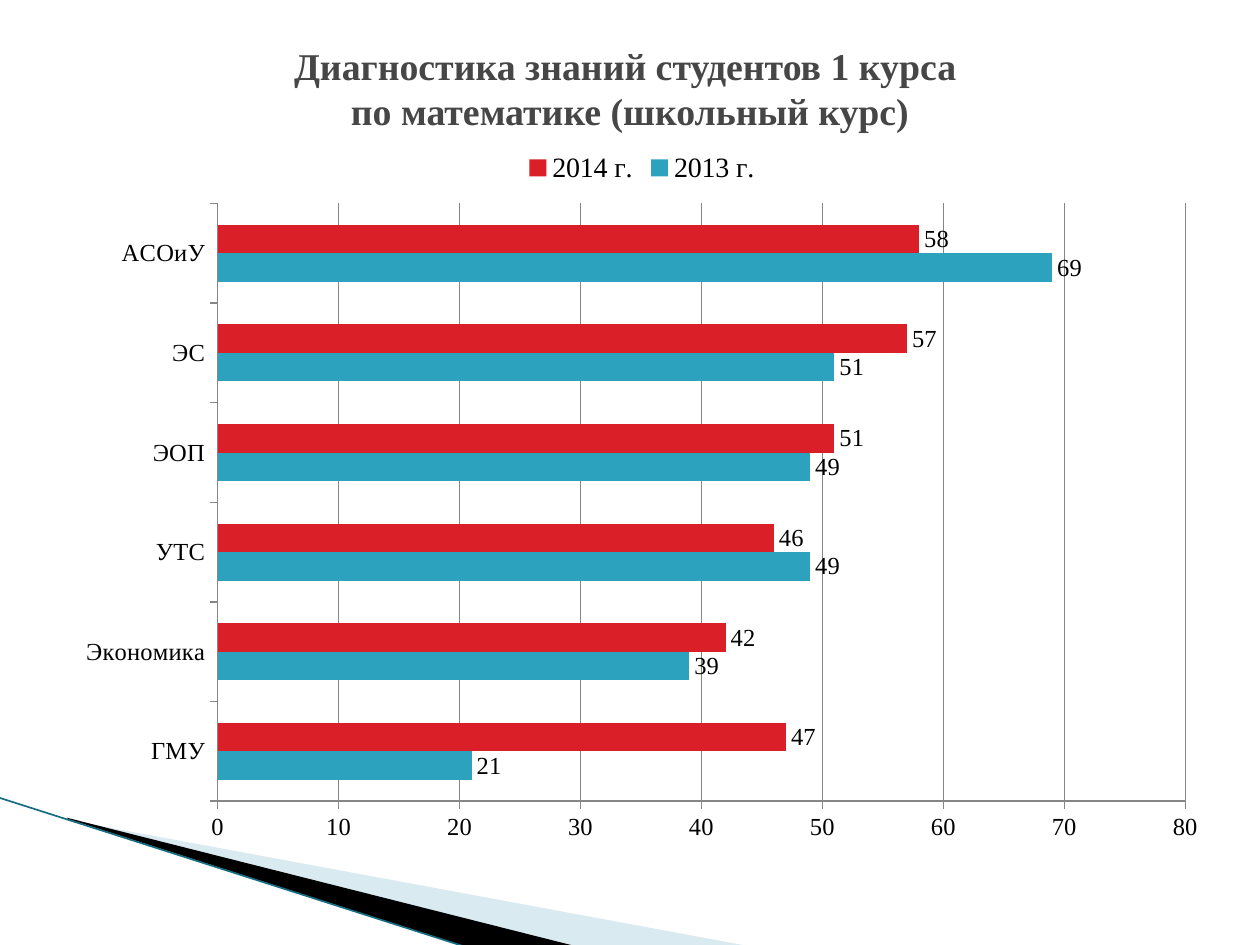
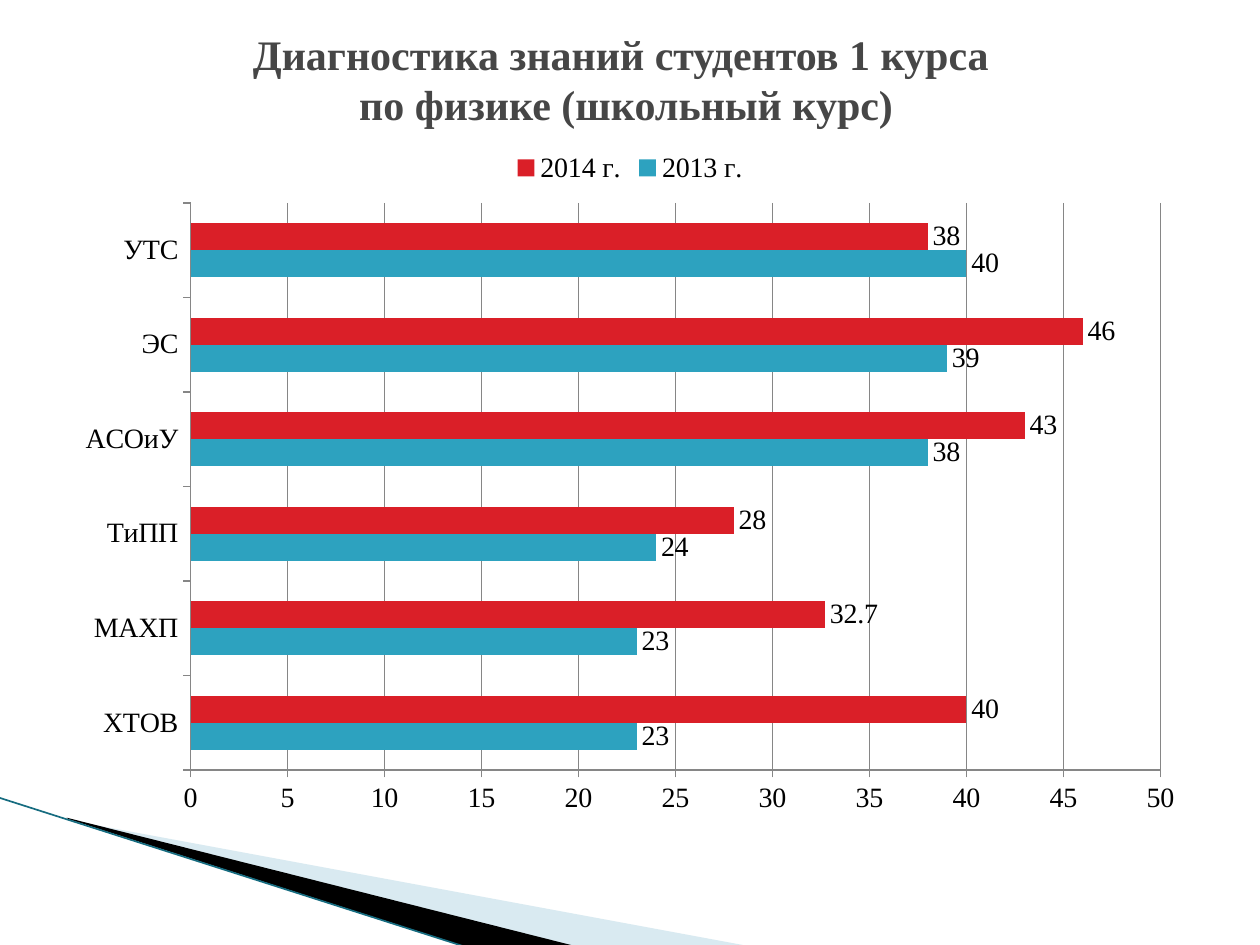
import pptx
import pptx.chart.data
import pptx.dml.color
import pptx.enum.chart
import pptx.enum.shapes
import pptx.enum.text
import pptx.oxml
import pptx.oxml.ns
import pptx.util
from lxml import etree

Inches = pptx.util.Inches
Pt = pptx.util.Pt

# Shared look
FONT = "Times New Roman"
TITLE_COLOUR = "464646"
TEXT_COLOUR = "000000"
AXIS_COLOUR = "868686"
SERIES_COLOURS = {"2013 г.": "2DA2BF", "2014 г.": "DA1F28"}
PALE_WEDGE = [(0.55, 6.51), (5.95, 7.51), (4.56, 7.51), (0.55, 6.5)]
DARK_WEDGE = [(0.53, 6.49), (4.57, 7.51), (3.72, 7.52), (0.54, 6.5)]


def colour(hex_string):
    return pptx.dml.color.RGBColor.from_string(hex_string)


def set_font(font, size, hex_string, bold=False):
    font.name = FONT
    font.size = Pt(size)
    font.bold = bold
    font.color.rgb = colour(hex_string)


def set_line(line, hex_string, width):
    line.color.rgb = colour(hex_string)
    line.width = Pt(width)


def add_wedge(page, points, fill, opacity=100):
    corners = [(Inches(x), Inches(y)) for x, y in points]
    builder = page.shapes.build_freeform(*corners[0])
    builder.add_line_segments(corners[1:], close=True)
    wedge = builder.convert_to_shape()
    wedge.shadow.inherit = False
    wedge.fill.solid()
    wedge.fill.fore_color.rgb = colour(fill)
    wedge.line.fill.background()
    if opacity < 100:
        tint = wedge.fill._xPr.find(".//" + pptx.oxml.ns.qn("a:srgbClr"))
        alpha = etree.SubElement(tint, pptx.oxml.ns.qn("a:alpha"))
        alpha.set("val", str(opacity * 1000))


def add_corner(page):
    """Wedges and edge line in the lower left corner."""
    add_wedge(page, PALE_WEDGE, "A0CBDC", opacity=40)
    add_wedge(page, DARK_WEDGE, "000000")
    edge = page.shapes.add_connector(
        pptx.enum.shapes.MSO_CONNECTOR.STRAIGHT,
        Inches(-0.01), Inches(6.33), Inches(3.71), Inches(7.52))
    set_line(edge.line, "166C80", 0.95)
    etree.SubElement(edge._element.spPr, pptx.oxml.ns.qn("a:effectLst"))


def add_title(page, lines, place, size):
    box = page.shapes.add_textbox(*map(Inches, place))
    frame = box.text_frame
    frame.word_wrap = True
    frame.vertical_anchor = pptx.enum.text.MSO_ANCHOR.MIDDLE
    para = frame.paragraphs[0]
    para.alignment = pptx.enum.text.PP_ALIGN.CENTER
    for number, line in enumerate(lines):
        if number:
            para.add_line_break()
        span = para.add_run()
        span.text = line
        set_font(span.font, size, TITLE_COLOUR, bold=True)


def style_axis(axis, size):
    axis.major_tick_mark = pptx.enum.chart.XL_TICK_MARK.OUTSIDE
    axis.minor_tick_mark = pptx.enum.chart.XL_TICK_MARK.NONE
    set_line(axis.format.line, AXIS_COLOUR, 0.75)
    set_font(axis.tick_labels.font, size, TEXT_COLOUR)


def add_score_chart(page, place, groups, scores, size, top, step):
    data = pptx.chart.data.CategoryChartData()
    data.categories = groups
    for year, values in scores.items():
        data.add_series(year, values)
    chart = page.shapes.add_chart(
        pptx.enum.chart.XL_CHART_TYPE.BAR_CLUSTERED,
        *map(Inches, place), data).chart
    set_font(chart.font, size, TEXT_COLOUR)
    chart.has_title = False

    # Legend
    chart.has_legend = True
    chart.legend.position = pptx.enum.chart.XL_LEGEND_POSITION.TOP
    chart.legend.include_in_layout = False
    set_font(chart.legend.font, 16, TEXT_COLOUR)

    # Axes
    style_axis(chart.category_axis, size)
    scale = chart.value_axis
    style_axis(scale, size)
    scale.minimum_scale, scale.maximum_scale = 0, top
    scale.major_unit = step
    scale.has_major_gridlines = True
    set_line(scale.major_gridlines.format.line, AXIS_COLOUR, 0.75)

    # Bars and their values
    plot = chart.plots[0]
    plot.gap_width = 150
    plot.overlap = 0
    plot.vary_by_categories = False
    for series in plot.series:
        series.format.fill.solid()
        series.format.fill.fore_color.rgb = colour(SERIES_COLOURS[series.name])
        series.invert_if_negative = False
        labels = series.data_labels
        labels.show_value = True
        labels.position = pptx.enum.chart.XL_LABEL_POSITION.OUTSIDE_END
        set_font(labels.font, size, TEXT_COLOUR)


def add_page(deck):
    page = deck.slides.add_slide(deck.slide_layouts[6])
    add_corner(page)
    return page


def main():
    deck = pptx.Presentation()
    deck.slide_width, deck.slide_height = Inches(10), Inches(7.5)

    # Mathematics
    page = add_page(deck)
    add_score_chart(
        page, (0.5, 1.09, 9.19, 5.7),
        ["ГМУ", "Экономика", "УТС", "ЭОП", "ЭС", "АСОиУ"],
        {"2013 г.": [21, 39, 49, 49, 51, 69],
         "2014 г.": [47, 42, 46, 51, 57, 58]},
        size=14, top=80, step=10)
    add_title(page, ["Диагностика знаний студентов 1 курса ",
                     "по математике (школьный курс)"],
              (0.5, 0.3, 9, 0.79), 21.6)

    # Physics
    page = add_page(deck)
    add_score_chart(
        page, (0.5, 1.09, 9, 5.48),
        ["ХТОВ", "МАХП", "ТиПП", "АСОиУ", "ЭС", "УТС"],
        {"2013 г.": [23, 23, 24, 38, 39, 40],
         "2014 г.": [40, 32.7, 28, 43, 46, 38]},
        size=16, top=50, step=5)
    add_title(page, ["Диагностика знаний студентов 1 курса ",
                     "по физике (школьный курс)"],
              (0.47, 0, 9, 1.25), 24)

    deck.save("out.pptx")


if __name__ == "__main__":
    main()
